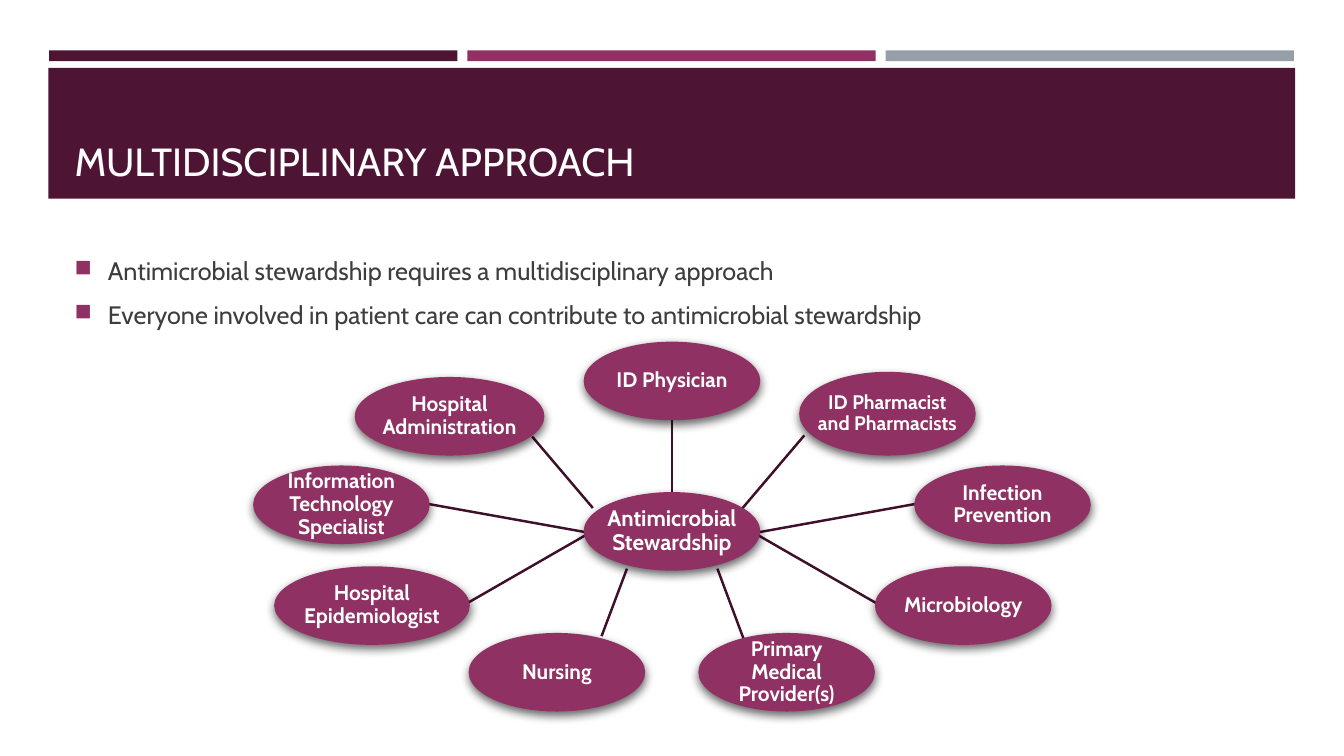
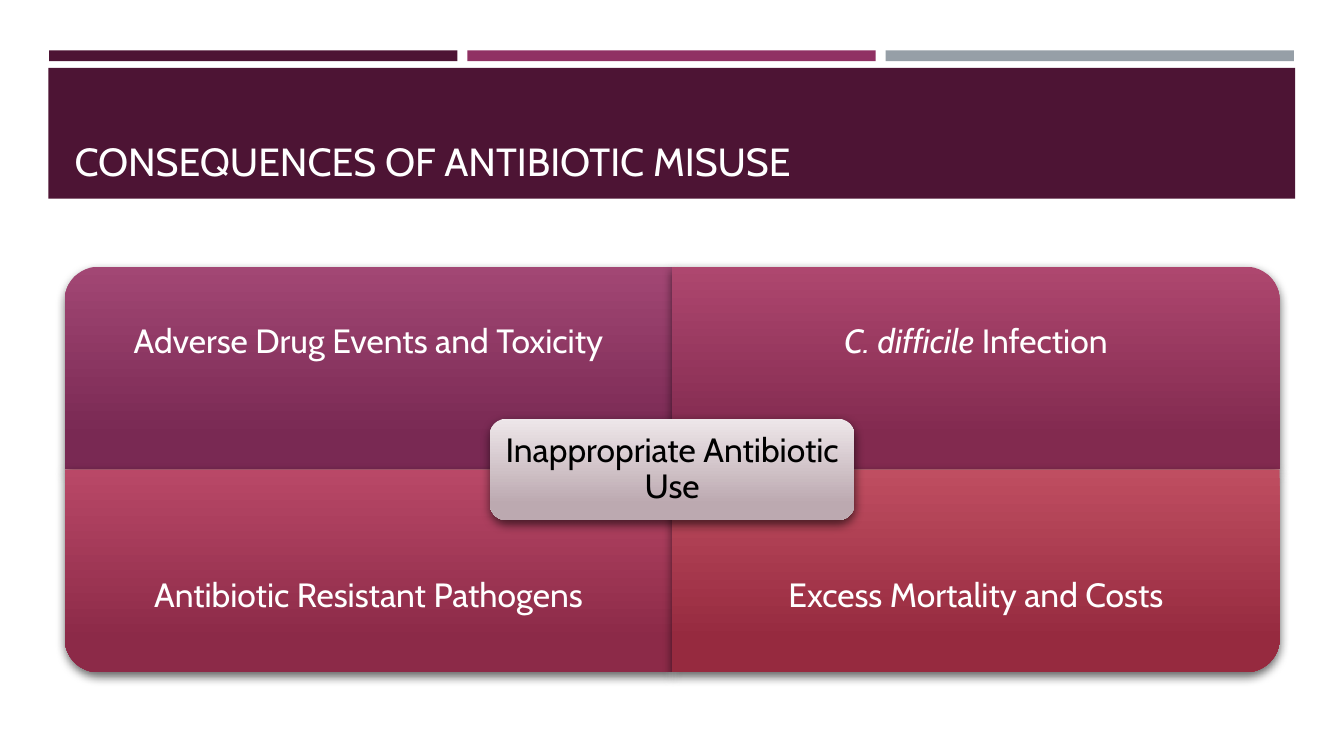
"""Build two slides on antimicrobial stewardship and antibiotic misuse."""
from lxml import etree
from pptx import Presentation
from pptx.dml.color import RGBColor
from pptx.enum.shapes import MSO_CONNECTOR as CONNECTOR, MSO_SHAPE as SHAPE
from pptx.enum.text import MSO_ANCHOR as ANCHOR, PP_ALIGN as ALIGN
from pptx.oxml import parse_xml
from pptx.oxml.ns import nsdecls, qn
from pptx.util import Cm, Pt

FONT = "Cabin"
COLORS = {
    "plum": "4D1434",
    "berry": "903163",
    "gray": "969FA7",
    "line": "3E102A",
    "body": "3D3D3D",
    "white": "FFFFFF",
    "black": "000000",
}


def add_run(paragraph, text, size, color, bold=False, italic=False):
    run = paragraph.add_run()
    run.text = text
    run.font.name = FONT
    run.font.size = Pt(size)
    run.font.bold = bold
    run.font.italic = italic
    run.font.color.rgb = RGBColor.from_string(COLORS[color])


def cast_shadow(shape):
    shape.line.fill.background()
    shape._element.spPr.append(parse_xml(
        f'<a:effectLst {nsdecls("a")}>'
        '<a:outerShdw blurRad="88900" dist="38100" dir="5040000" rotWithShape="0">'
        f'<a:srgbClr val="{COLORS["black"]}"><a:alpha val="60000"/></a:srgbClr>'
        '</a:outerShdw></a:effectLst>'))


presentation = Presentation()
presentation.slide_width = Cm(33.87)
presentation.slide_height = Cm(19.05)

bands = [(1.24 + 10.54 * index, 1.27, 10.29, 0.27, color)
         for index, color in enumerate(["plum", "berry", "gray"])]
bands.append((1.22, 1.71, 31.42, 3.3, "plum"))

slides = []
for title in ["MULTIDISCIPLINARY APPROACH", "CONSEQUENCES OF ANTIBIOTIC MISUSE"]:
    slide = presentation.slides.add_slide(presentation.slide_layouts[6])
    for left, top, width, height, color in bands:
        band = slide.shapes.add_shape(SHAPE.RECTANGLE, Cm(left), Cm(top), Cm(width), Cm(height))
        band.shadow.inherit = False
        band.fill.solid()
        band.fill.fore_color.rgb = RGBColor.from_string(COLORS[color])
        band.line.fill.background()
    title_box = slide.shapes.add_textbox(Cm(1.63), Cm(1.96), Cm(30.63), Cm(2.82))
    title_box.text_frame.word_wrap = True
    title_box.text_frame.vertical_anchor = ANCHOR.BOTTOM
    add_run(title_box.text_frame.paragraphs[0], title, 28, "white")
    slides.append(slide)
team_slide, misuse_slide = slides

bullets = [
    "Antimicrobial stewardship requires a multidisciplinary approach",
    "Everyone involved in patient care can contribute to antimicrobial stewardship",
]
bullet_box = team_slide.shapes.add_textbox(Cm(1.63), Cm(6.32), Cm(30.63), Cm(2.2))
bullet_frame = bullet_box.text_frame
bullet_frame.word_wrap = True
for index, text in enumerate(bullets):
    paragraph = bullet_frame.add_paragraph() if index else bullet_frame.paragraphs[0]
    paragraph.space_after = Pt(9.6)
    properties = paragraph._p.get_or_add_pPr()
    properties.set("marL", str(Cm(0.84)))
    properties.set("indent", str(-Cm(0.84)))
    bullet_color = etree.SubElement(properties, qn("a:buClr"))
    etree.SubElement(bullet_color, qn("a:srgbClr"), val=COLORS["berry"])
    etree.SubElement(properties, qn("a:buSzPct"), val="92000")
    etree.SubElement(properties, qn("a:buChar"), char="■")
    add_run(paragraph, text, 18, "body")

spokes = [
    (16.93, 12.4, 16.93, 10.59),
    (18.69, 12.83, 20.27, 10.97),
    (19.13, 13.41, 23.06, 12.7),
    (18.85, 13.34, 22.33, 15.34),
    (18.08, 14.33, 18.8, 16.26),
    (15.8, 14.33, 15.16, 16.03),
    (15.01, 13.34, 11.53, 15.34),
    (14.76, 13.41, 10.8, 12.7),
    (14.94, 12.8, 13.41, 11),
]
for ends in spokes:
    spoke = team_slide.shapes.add_connector(CONNECTOR.STRAIGHT, *[Cm(value) for value in ends])
    spoke.line.color.rgb = RGBColor.from_string(COLORS["line"])
    spoke.line.width = Pt(1.75)
    etree.SubElement(spoke._element.spPr, qn("a:effectLst"))

members = [
    (["Antimicrobial", "Stewardship"], 14.71, 12.4, 4.45, 1.98, 16),
    (["ID Physician"], 14.71, 8.61, 4.45, 1.98, 15),
    (["ID Pharmacist", "and Pharmacists"], 20.14, 9.37, 4.45, 2.11, 14),
    (["Infection", "Prevention"], 23.04, 11.73, 4.45, 1.98, 15),
    (["Microbiology"], 22.05, 14.27, 4.45, 1.98, 15),
    (["Primary", "Medical", "Provider(s)"], 17.6, 15.95, 4.45, 1.98, 15),
    (["Nursing"], 11.81, 15.95, 4.45, 1.98, 15),
    (["Hospital", "Epidemiologist"], 6.91, 14.27, 4.93, 1.98, 15),
    (["Information", "Technology", "Specialist"], 6.38, 11.73, 4.45, 1.98, 15),
    (["Hospital", "Administration"], 8.94, 9.5, 4.78, 1.98, 15),
]
for lines, left, top, width, height, size in members:
    oval = team_slide.shapes.add_shape(SHAPE.OVAL, Cm(left), Cm(top), Cm(width), Cm(height))
    oval.fill.solid()
    oval.fill.fore_color.rgb = RGBColor.from_string(COLORS["berry"])
    cast_shadow(oval)
    frame = oval.text_frame
    frame.word_wrap = False
    frame.vertical_anchor = ANCHOR.MIDDLE
    frame.margin_left = frame.margin_right = frame.margin_top = frame.margin_bottom = 0
    paragraph = frame.paragraphs[0]
    paragraph.alignment = ALIGN.CENTER
    paragraph.line_spacing = 0.9
    for index, line in enumerate(lines):
        if index:
            paragraph.add_line_break()
        add_run(paragraph, line, size, "white", bold=True)

grid_left, grid_top, tile_width, tile_height = 1.63, 6.72, 15.31, 5.11
middle, center = grid_left + tile_width, grid_top + tile_height
label_height = tile_height * 0.75
low_label_top = center + tile_height * 0.25
label_width, core_height = 9.2, 2.56
core_left, core_top = middle - label_width / 2, center - core_height / 2
corner, rounded = SHAPE.ROUND_1_RECTANGLE, SHAPE.ROUNDED_RECTANGLE
tiles = [
    (corner, grid_left, grid_top, tile_width, tile_height, 270, ("A24774", "792953"),
     grid_top, label_height, "white", [("Adverse Drug Events and Toxicity", False)]),
    (corner, middle, grid_top, tile_width, tile_height, 0, ("AE476F", "822A4F"),
     grid_top, label_height, "white", [("C. difficile ", True), ("Infection", False)]),
    (corner, grid_left, center, tile_width, tile_height, 180, ("B94867", "8C2A48"),
     low_label_top, label_height, "white", [("Antibiotic Resistant Pathogens", False)]),
    (corner, middle, center, tile_width, tile_height, 90, ("BF4E61", "962A3F"),
     low_label_top, label_height, "white", [("Excess Mortality and Costs", False)]),
    (rounded, core_left, core_top, label_width, core_height, 0, ("EEE7EA", "BCA9B0"),
     core_top, core_height, "black", [("Inappropriate Antibiotic Use", False)]),
]
for kind, left, top, width, height, turn, shades, label_top, label_size, color, runs in tiles:
    wide, high = (height, width) if turn in (90, 270) else (width, height)
    tile = misuse_slide.shapes.add_shape(
        kind, Cm(left + (width - wide) / 2), Cm(top + (height - high) / 2), Cm(wide), Cm(high))
    tile.rotation = turn
    tile.fill.gradient()
    tile.fill.gradient_angle = 270
    for stop, shade, position in zip(tile.fill.gradient_stops, shades, (0, 0.84)):
        stop.color.rgb = RGBColor.from_string(shade)
        stop.position = position
    tile._element.spPr.find(qn("a:gradFill")).set("rotWithShape", "0")
    cast_shadow(tile)
    label = misuse_slide.shapes.add_textbox(Cm(left), Cm(label_top), Cm(width), Cm(label_size))
    label.text_frame.word_wrap = True
    label.text_frame.vertical_anchor = ANCHOR.MIDDLE
    paragraph = label.text_frame.paragraphs[0]
    paragraph.alignment = ALIGN.CENTER
    paragraph.line_spacing = 0.9
    for text, italic in runs:
        add_run(paragraph, text, 24, color, italic=italic)

presentation.save("out.pptx")
